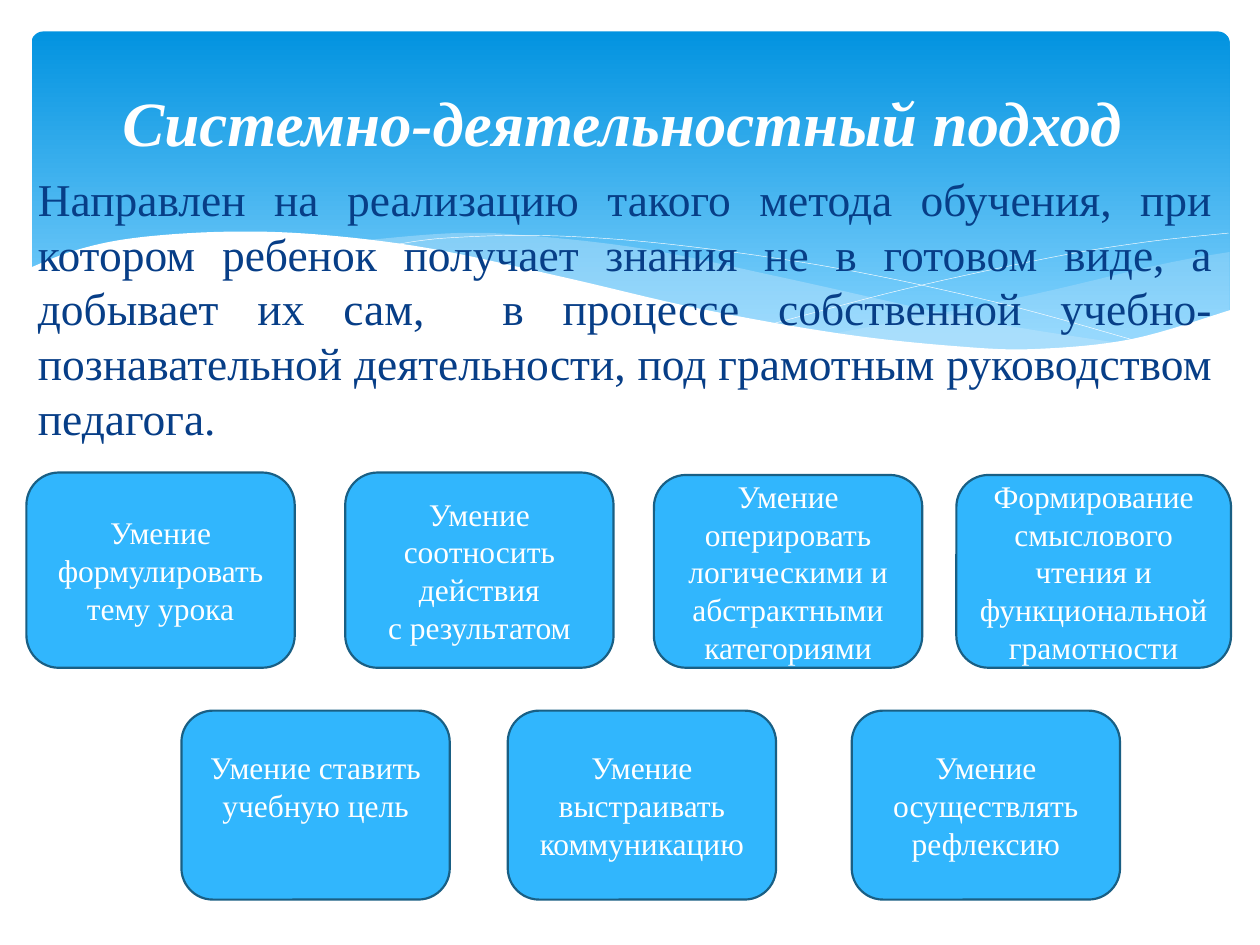
from lxml import etree
from pptx import Presentation
from pptx.dml.color import RGBColor
from pptx.enum.shapes import MSO_SHAPE
from pptx.enum.text import MSO_ANCHOR, MSO_AUTO_SIZE, PP_ALIGN
from pptx.oxml.ns import qn
from pptx.util import Inches, Pt

ROUNDED = MSO_SHAPE.ROUNDED_RECTANGLE
CENTER, JUSTIFY = PP_ALIGN.CENTER, PP_ALIGN.JUSTIFY
TOP, MIDDLE = MSO_ANCHOR.TOP, MSO_ANCHOR.MIDDLE
NO_AUTOFIT = MSO_AUTO_SIZE.NONE

WHITE = RGBColor(0xFF, 0xFF, 0xFF)
NAVY = RGBColor(0x07, 0x3E, 0x87)
SKY = RGBColor(0x31, 0xB6, 0xFD)
SKY_EDGE = RGBColor(0x19, 0x5F, 0x84)
BANNER_TOP = RGBColor(0x02, 0x93, 0xE0)
BANNER_BOTTOM = RGBColor(0x83, 0xD3, 0xFE)
MIST = RGBColor(0xC6, 0xE7, 0xFC)

FONT = "Times New Roman"
NO_BREAK_SPACE = chr(160)
CURVE_STEPS = 8
SKILL_WIDTH = 2.13
INSET = 0.05
EMPTY_LINE = 0.3


def write_text(shape, text, size=18, color=WHITE, align=CENTER, anchor=MIDDLE,
               bold=False, italic=False):
    frame = shape.text_frame
    frame.word_wrap = True
    frame.auto_size = NO_AUTOFIT
    frame.vertical_anchor = anchor
    paragraph = frame.paragraphs[0]
    paragraph.alignment = align
    run = paragraph.add_run()
    run.text = text
    run.font.name = FONT
    run.font.size = Pt(size)
    run.font.color.rgb = color
    run.font.bold = bold
    run.font.italic = italic
    return paragraph


def add_wave(shapes, *edges, fill=None, opacity=100):
    """Join edges, each a Catmull-Rom curve through its knots, into one outline.

    Without a fill the wave is an open white hairline.
    """
    outline = []
    for knots in edges:
        padded = [knots[0], *knots, knots[-1]]
        for before, start, end, after in zip(padded, padded[1:], padded[2:], padded[3:]):
            for step in range(CURVE_STEPS):
                t = step / CURVE_STEPS
                outline.append([
                    Inches(b + ((c - a) * t + (2 * a - 5 * b + 4 * c - d) * t ** 2
                                + (3 * b - a - 3 * c + d) * t ** 3) / 2)
                    for a, b, c, d in zip(before, start, end, after)])
        outline.append([Inches(length) for length in knots[-1]])

    builder = shapes.build_freeform(*outline[0])
    builder.add_line_segments(outline[1:], close=fill is not None)
    wave = builder.convert_to_shape()
    wave.shadow.inherit = False
    if fill is None:
        wave.fill.background()
        wave.line.color.rgb = WHITE
        wave.line.width = Pt(0.25)
        return
    wave.line.fill.background()
    wave.fill.solid()
    wave.fill.fore_color.rgb = fill
    if opacity < 100:
        color = wave.element.spPr.find(qn("a:solidFill"))[0]
        etree.SubElement(color, qn("a:alpha"), val=str(opacity * 1000))


prs = Presentation()
prs.slide_width, prs.slide_height = Inches(10), Inches(7.5)
slide = prs.slides.add_slide(prs.slide_layouts[1])
shapes = slide.shapes
title, body = slide.placeholders

# Banner
banner = shapes.add_shape(ROUNDED, Inches(0.25), Inches(0.25), Inches(9.51), Inches(2.7))
banner.adjustments[0] = 0.034
banner.shadow.inherit = False
banner.line.fill.background()
banner.fill.gradient()
banner.fill.gradient_angle = 270
for stop, position, color in zip(banner.fill.gradient_stops, (0, 0.9),
                                 (BANNER_TOP, BANNER_BOTTOM)):
    stop.position = position
    stop.color.rgb = color

# Waves over the banner, from back to front; each edge is a few (x, y) knots in inches
right_crest = [(9.76, 2), (9.21, 2.1), (8.05, 2.37), (6.61, 2.65)]
right_trough = [(6.61, 2.65), (7.32, 2.74), (8.14, 2.78), (8.97, 2.7), (9.76, 2.47)]
add_wave(shapes, right_crest, right_trough, fill=MIST, opacity=29)

middle_crest = [(8.93, 2.73), (7.75, 2.54), (6.29, 2.22), (5.14, 1.98),
                (4.2, 1.87), (3.61, 1.85), (2.86, 1.91)]
middle_trough = [(2.86, 1.91), (3.62, 2.03), (4.49, 2.22), (5.66, 2.48),
                 (6.8, 2.68), (7.85, 2.78), (8.93, 2.73)]
add_wave(shapes, middle_crest, middle_trough, fill=MIST, opacity=40)

falling_line = [(3.09, 1.95), (3.53, 1.89), (4.33, 1.87), (5.33, 1.94),
                (6.65, 2.13), (7.95, 2.41), (9.07, 2.72)]
rising_line = [(6.13, 2.57), (7.2, 2.29), (8.36, 2.04), (9.1, 1.92), (9.75, 1.85)]
for hairline in (falling_line, rising_line):
    add_wave(shapes, hairline)

front_crest = [(0.23, 2.13), (0.59, 1.99), (1.06, 1.89), (1.77, 1.84), (2.5, 1.86),
               (3.4, 1.97), (4.47, 2.2), (5.55, 2.45), (6.68, 2.65), (7.61, 2.75),
               (8.23, 2.77), (8.99, 2.69), (9.77, 2.46)]
front_base = [(9.77, 3.29), (0.23, 3.29)]
add_wave(shapes, front_crest, front_base, fill=WHITE)

# Heading and definition, brought in front of the banner
for placeholder, box in ((body, (0.2, 1.31, 9.53, 5.98)), (title, (0.5, 0.37, 9, 1.18))):
    placeholder.left, placeholder.top, placeholder.width, placeholder.height = map(Inches, box)
    placeholder.element.getparent().append(placeholder.element)

write_text(title, "Системно-деятельностный подход ", size=36, bold=True, italic=True)
definition = write_text(
    body,
    "Направлен на реализацию такого метода обучения, при котором ребенок получает "
    "знания не в готовом виде, а добывает их сам,  в процессе собственной "
    "учебно-познавательной деятельности, под грамотным руководством педагога.",
    size=26, color=NAVY, align=JUSTIFY, anchor=TOP)
definition_format = definition._p.get_or_add_pPr()
definition_format.set("marL", "0")
definition_format.set("indent", "0")
etree.SubElement(definition_format, qn("a:buNone"))

# Skills: the boxes of a row share their bottom edge
skill_rows = [
    (5.3, [  # left, top, width, text
        (0.21, 3.75, SKILL_WIDTH, "Умение формулировать тему урока"),
        (2.74, 3.75, SKILL_WIDTH, f"Умение соотносить действия с{NO_BREAK_SPACE}результатом"),
        (5.19, 3.77, SKILL_WIDTH, "Умение оперировать логическими и абстрактными категориями"),
        (7.59, 3.77, 2.18, "Формирование смыслового чтения и функциональной грамотности"),
    ]),
    (7.14, [
        (1.44, 5.64, SKILL_WIDTH, "Умение ставить учебную цель"),
        (4.03, 5.64, SKILL_WIDTH, "Умение выстраивать коммуникацию"),
        (6.76, 5.64, SKILL_WIDTH, "Умение осуществлять рефлексию"),
    ]),
]
skill_boxes = []
for bottom, row in skill_rows:
    for left, top, width, text in row:
        skill = shapes.add_shape(ROUNDED, Inches(left), Inches(top),
                                 Inches(width), Inches(bottom - top))
        skill.shadow.inherit = False
        skill.fill.solid()
        skill.fill.fore_color.rgb = SKY
        skill.line.color.rgb = SKY_EDGE
        skill.line.width = Pt(1.25)
        write_text(skill, text)
        skill_boxes.append(skill)

# The two-line goal text starts level with its three-line neighbours
goal_skill = skill_boxes[4]
goal_skill.text_frame.margin_bottom = Inches(INSET + EMPTY_LINE)

prs.save("out.pptx")
